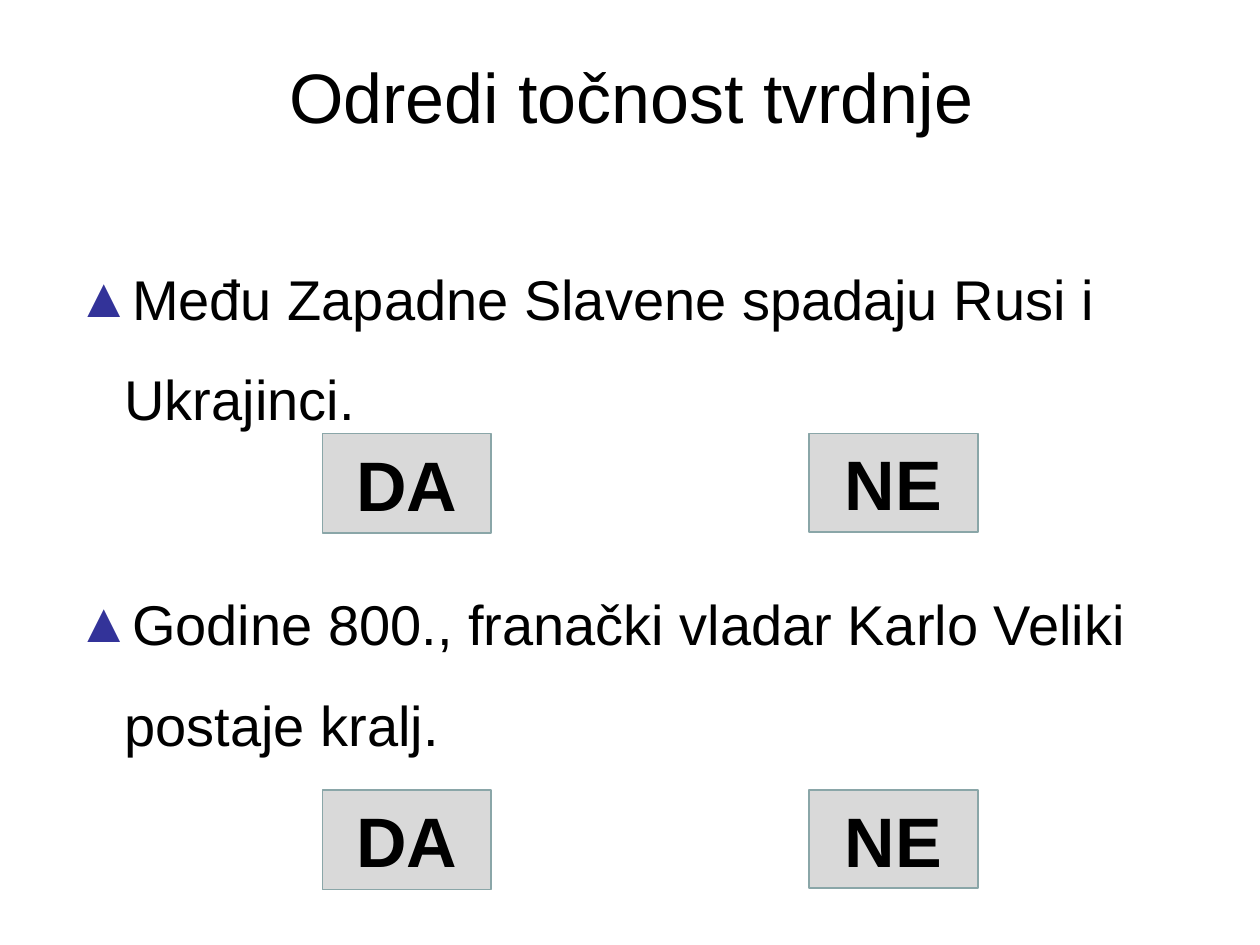
from lxml import etree
from pptx import Presentation
from pptx.dml.color import RGBColor
from pptx.enum.shapes import MSO_SHAPE
from pptx.enum.text import MSO_ANCHOR, PP_ALIGN
from pptx.oxml.ns import qn
from pptx.util import Inches, Pt

FONT = "Arial"
COLORS = {"text": "000000", "bullet": "333399", "button": "D9D9D9", "edge": "8AA6A8"}
STATEMENTS = [
    "Među Zapadne Slavene spadaju Rusi i Ukrajinci.",
    "Godine 800., franački vladar Karlo Veliki postaje kralj.",
]
ANSWERS = [("DA", 0, 0.79), ("NE", 3.86, 0.78)]  # label, offset, height


def rgb(name):
    return RGBColor.from_string(COLORS[name])


def add_run(p, text, size, bold=False):
    r = p.add_run()
    r.text = text
    r.font.name, r.font.size, r.font.bold = FONT, Pt(size), bold
    r.font.color.rgb = rgb("text")


def add_box(slide, x, y, w, h):
    sp = slide.shapes.add_textbox(Inches(x), Inches(y), Inches(w), Inches(h))
    sp.text_frame.word_wrap = True
    return sp.text_frame


def set_bullet(p, char):
    pPr = p._p.get_or_add_pPr()
    pPr.set("marL", str(Inches(0.38)))
    pPr.set("indent", str(Inches(-0.38)))
    color = etree.SubElement(pPr, qn("a:buClr"))
    etree.SubElement(color, qn("a:srgbClr"), val=COLORS["bullet"])
    etree.SubElement(pPr, qn("a:buFont"), typeface=FONT)
    etree.SubElement(pPr, qn("a:buChar"), char=char)


def add_title(slide, x, y, w, h):
    tf = add_box(slide, x, y, w, h)
    tf.vertical_anchor = MSO_ANCHOR.MIDDLE
    p = tf.paragraphs[0]
    p.alignment = PP_ALIGN.CENTER
    add_run(p, "Odredi točnost tvrdnje", 40)


def add_statements(slide, x, y, w, h):
    tf = add_box(slide, x, y, w, h)
    for i, text in enumerate(STATEMENTS):
        p = tf.paragraphs[0] if i == 0 else tf.add_paragraph()
        set_bullet(p, "▲")
        p.line_spacing = 1.5
        if i:
            p.space_before = Pt(71)  # leaves room for the answer buttons
        add_run(p, text, 32)


def add_answers(slide, x, y):
    for label, dx, height in ANSWERS:
        sp = slide.shapes.add_shape(MSO_SHAPE.ACTION_BUTTON_CUSTOM, Inches(x + dx),
                                    Inches(y), Inches(1.34), Inches(height))
        sp.shadow.inherit = False
        sp.fill.solid()
        sp.fill.fore_color.rgb = rgb("button")
        sp.line.color.rgb = rgb("edge")
        sp.line.width = Pt(1)
        tf = sp.text_frame
        tf.vertical_anchor = MSO_ANCHOR.MIDDLE
        p = tf.paragraphs[0]
        p.alignment = PP_ALIGN.CENTER
        add_run(p, label, 40, bold=True)


def main():
    prs = Presentation()
    prs.slide_width, prs.slide_height = Inches(10), Inches(7.5)
    slide = prs.slides.add_slide(prs.slide_layouts[6])
    add_title(slide, 0.51, 0.28, 9, 0.95)
    add_statements(slide, 0.51, 1.78, 9, 4.25)
    # One row of buttons per statement
    for top in (3.44, 6.27):
        add_answers(slide, 2.56, top)
    prs.save("out.pptx")


if __name__ == "__main__":
    main()
